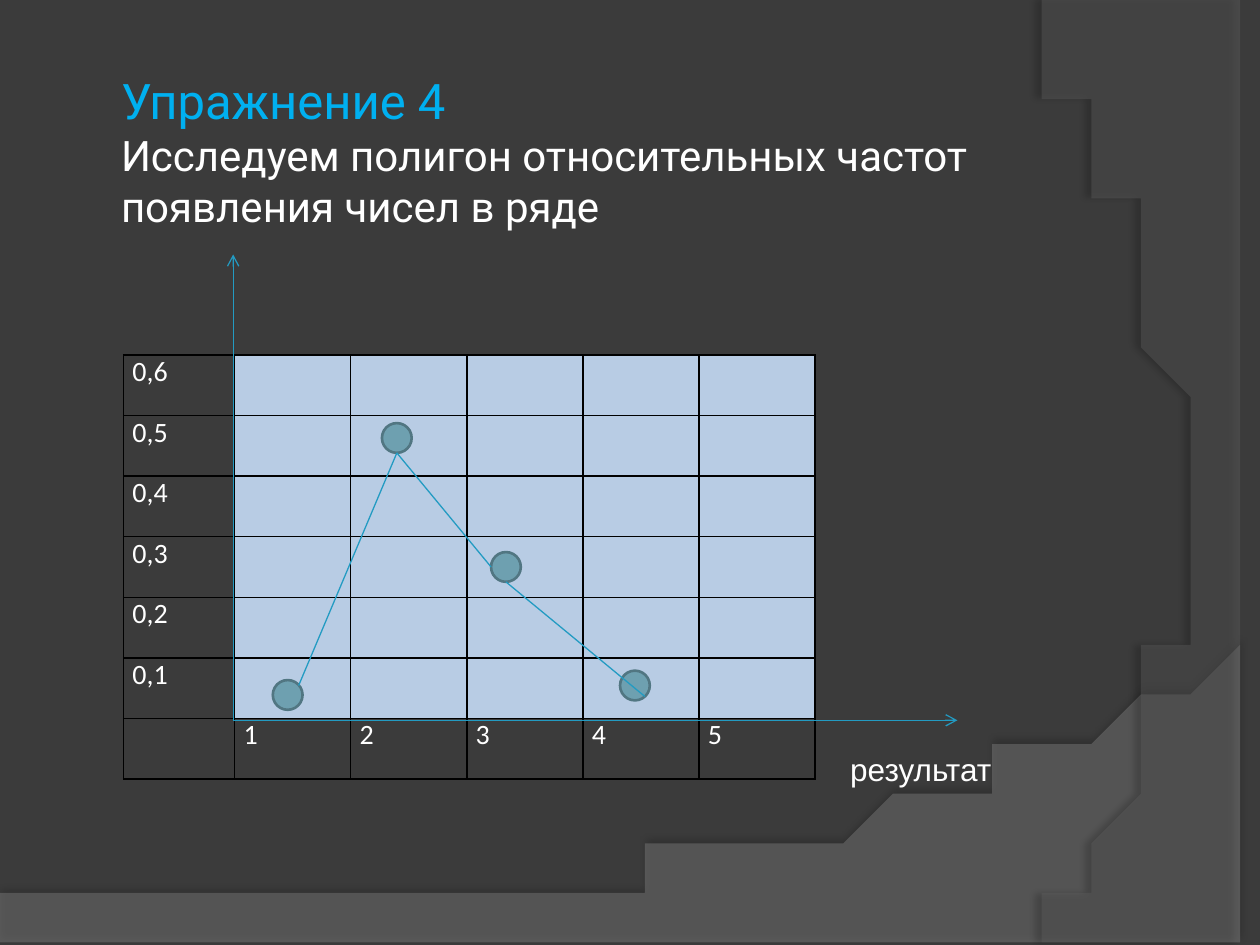
from lxml.etree import SubElement
from pptx import Presentation
from pptx.dml.color import RGBColor
from pptx.enum.shapes import MSO_CONNECTOR as Connector, MSO_SHAPE as Preset
from pptx.enum.text import MSO_ANCHOR as Anchor, MSO_AUTO_SIZE as AutoSize, PP_ALIGN as Align
from pptx.oxml.ns import qn
from pptx.util import Cm, Pt

COLORS = {
    "background": "3B3B3B", "wave": "7F7F7F", "arc": "5E5E5E",
    "heading": "00B0F0", "text": "FFFFFF", "border": "000000",
    "plot": "B8CCE4", "dot": "6EA0B0", "dot_edge": "517682", "line": "239BC2",
}


def color(name):
    return RGBColor.from_string(COLORS[name])


def write(para, text, *, size, font, tint="text"):
    """Add a formatted span of text to a paragraph."""
    span = para.add_run()
    span.text = text
    span.font.size = Pt(size)
    span.font.name = font
    span.font.color.rgb = color(tint)
    para.alignment = Align.LEFT


deck = Presentation()
deck.slide_width, deck.slide_height = Cm(25.4), Cm(19.05)
page = deck.slides.add_slide(deck.slide_layouts[5])
page.background.fill.solid()
page.background.fill.fore_color.rgb = color("background")

# Backdrop: each outline is straight corners followed by one Bezier curve
backdrops = [
    ("wave", 45, [(0, 17.91), (0, 19.05), (25.4, 19.05)],
     [(25.4, 13.21), (14.2, 18.52), (9.93, 18.26), (0, 17.91)], (35, 3.5, 270)),
    ("arc", 40, [(25.4, 0.05), (25.4, 19.05)],
     [(20.85, 19.05), (23.75, 15.72), (25.86, 7.62), (20.32, 0)], (45, 4, 180)),
]
STEPS = 60
for tint, opacity, corners, curve, (shade, distance, angle) in backdrops:
    points = list(corners)
    for step in range(STEPS + 1):
        t = step / STEPS
        weights = ((1 - t) ** 3, 3 * t * (1 - t) ** 2, 3 * t ** 2 * (1 - t), t ** 3)
        points.append(tuple(sum(w * point[axis] for w, point in zip(weights, curve))
                            for axis in (0, 1)))
    builder = page.shapes.build_freeform(*points[0], scale=Cm(1))
    builder.add_line_segments(points[1:], close=True)
    backdrop = builder.convert_to_shape()
    backdrop.fill.solid()
    backdrop.fill.fore_color.rgb = color(tint)
    backdrop.line.fill.background()
    backdrop.shadow.inherit = False
    properties = backdrop.element.spPr
    fill_color = properties.find(qn("a:solidFill")).find(qn("a:srgbClr"))
    SubElement(fill_color, qn("a:alpha"), val=str(opacity * 1000))
    shadow = SubElement(properties.find(qn("a:effectLst")), qn("a:outerShdw"),
                        blurRad=str(Pt(4)), dist=str(Pt(distance)),
                        dir=str(angle * 60000), rotWithShape="0")
    shadow_color = SubElement(shadow, qn("a:srgbClr"), val=COLORS["border"])
    SubElement(shadow_color, qn("a:alpha"), val=str(shade * 1000))

# Title, brought in front of the backdrop
title = page.shapes.title
title.element.getparent().append(title.element)
title.left, title.top, title.width, title.height = Cm(2.31), Cm(0.74), Cm(19.76), Cm(4.6)
frame = title.text_frame
frame.word_wrap = True
frame.auto_size = AutoSize.NONE
frame.vertical_anchor = Anchor.MIDDLE
frame.margin_left = frame.margin_right = frame.margin_top = frame.margin_bottom = Cm(0.13)
para = frame.paragraphs[0]
write(para, "Упражнение 4", size=28, font="Roboto", tint="heading")
para.add_line_break()
write(para, "Исследуем полигон относительных частот появления чисел в ряде",
      size=24, font="Roboto")

# Grid: frequencies down the first column, results along the last row
frequencies = ["0,6", "0,5", "0,4", "0,3", "0,2", "0,1"]
results = ["1", "2", "3", "4", "5"]
rows, columns = len(frequencies) + 1, len(results) + 1
grid = page.shapes.add_table(rows, columns, Cm(2.49), Cm(7.16), Cm(13.94), Cm(8.54)).table
grid.first_row = grid.horz_banding = False
for index, column in enumerate(grid.columns):
    column.width = Cm(2.34 if index else 2.24)
for row in grid.rows:
    row.height = Cm(1.22)
for r in range(rows):
    for c in range(columns):
        cell = grid.cell(r, c)
        cell.margin_left = cell.margin_right = Cm(0.18)
        cell.margin_top = cell.margin_bottom = 0
        for side in ("lnL", "lnR", "lnT", "lnB"):
            edge = SubElement(cell._tc.get_or_add_tcPr(), qn(f"a:{side}"), w=str(Pt(1)))
            SubElement(SubElement(edge, qn("a:solidFill")), qn("a:srgbClr"),
                       val=COLORS["border"])
        if c > 0 and r < rows - 1:
            cell.fill.solid()
            cell.fill.fore_color.rgb = color("plot")
        else:
            cell.fill.background()
for r, label in enumerate(frequencies):
    write(grid.cell(r, 0).text_frame.paragraphs[0], label, size=16, font="Calibri")
for c, label in enumerate(results, start=1):
    write(grid.cell(rows - 1, c).text_frame.paragraphs[0], label, size=16, font="Calibri")

# Points of the polygon
for left, top in [(5.5, 13.71), (7.7, 8.53), (9.9, 11.13), (12.5, 13.52)]:
    dot = page.shapes.add_shape(Preset.FLOWCHART_CONNECTOR, Cm(left), Cm(top),
                                Cm(0.6), Cm(0.6))
    dot.shadow.inherit = False
    dot.fill.solid()
    dot.fill.fore_color.rgb = color("dot")
    dot.line.color.rgb = color("dot_edge")
    dot.line.width = Pt(1.5)

# Polygon segments, then the two axes with arrowheads
lines = [
    (6.02, 13.82, 8, 9.13, False),
    (8, 9.13, 9.9, 11.43, False),
    (10.2, 11.73, 13, 14.04, False),
    (4.7, 14.52, 4.7, 5.13, True),
    (4.7, 14.52, 19.3, 14.52, True),
]
for *ends, is_axis in lines:
    line = page.shapes.add_connector(Connector.STRAIGHT, *map(Cm, ends))
    line.line.color.rgb = color("line")
    line.line.width = Pt(0.75)
    properties = line.element.spPr
    if is_axis:
        SubElement(properties.find(qn("a:ln")), qn("a:tailEnd"), type="arrow")
    SubElement(properties, qn("a:effectLst"))

# Name of the horizontal axis
box = page.shapes.add_textbox(Cm(16.89), Cm(14.99), Cm(7.39), Cm(1.02))
box.text_frame.word_wrap = True
box.text_frame.auto_size = AutoSize.SHAPE_TO_FIT_TEXT
box.text_frame.vertical_anchor = Anchor.MIDDLE
write(box.text_frame.paragraphs[0], "результат", size=18, font="Arial")

deck.save("out.pptx")
